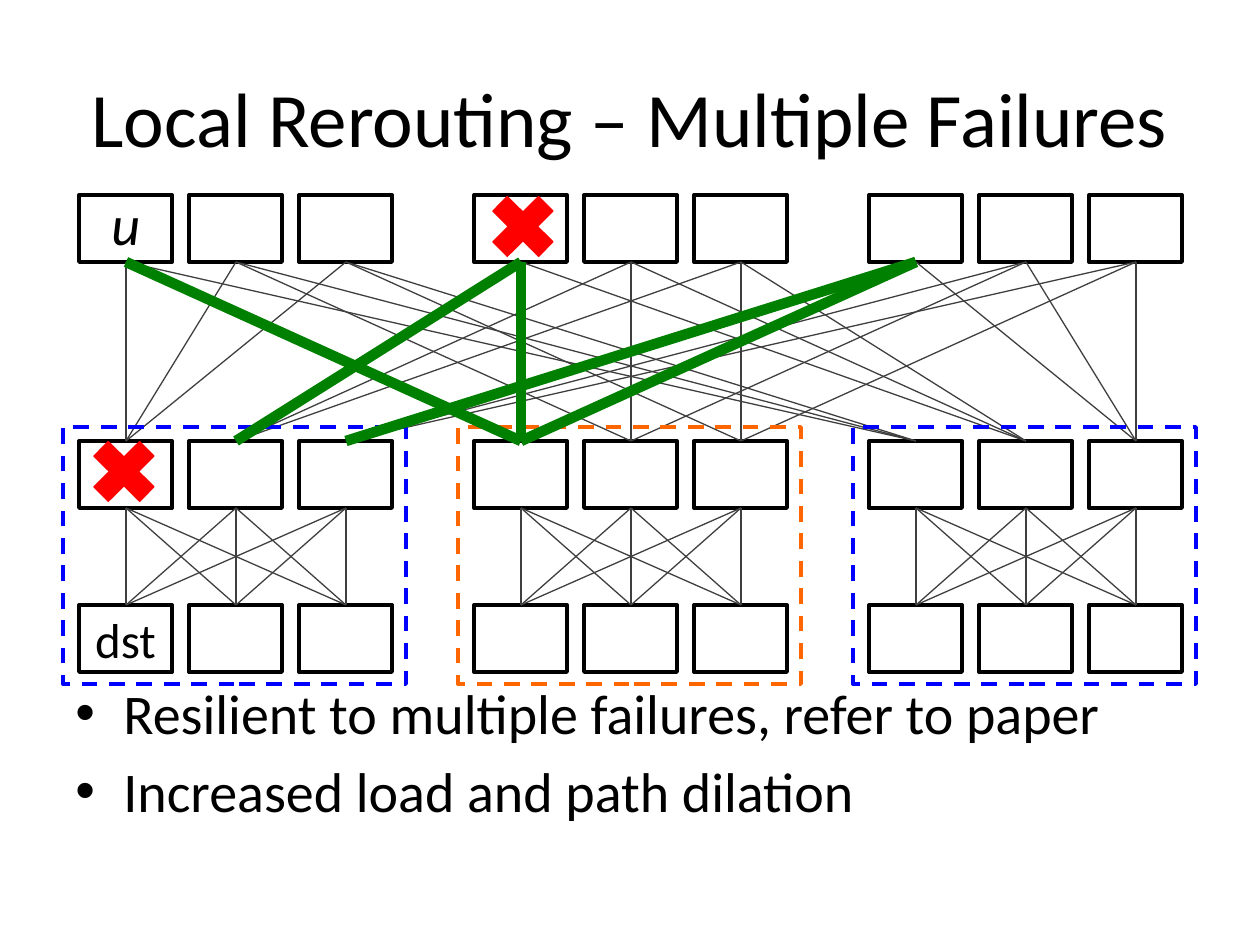
"""Build the slide on local rerouting around multiple failures in a three-pod network."""
from itertools import product

from lxml.etree import SubElement
from pptx import Presentation
from pptx.dml.color import RGBColor
from pptx.enum.dml import MSO_LINE_DASH_STYLE as Dash
from pptx.enum.shapes import MSO_CONNECTOR_TYPE as Connector, MSO_SHAPE as Shape
from pptx.enum.text import MSO_ANCHOR as Anchor, PP_ALIGN as Align
from pptx.oxml.ns import qn
from pptx.util import Emu, Pt

SCALE = 914400 / 126
rgb = RGBColor.from_string


def px(*lengths):
    return [Emu(round(length * SCALE)) for length in lengths]


def draw(kind, box, fill, line, weight):
    """Add a shape, or a straight link when kind is a connector type."""
    if isinstance(kind, Connector):
        part = slide.shapes.add_connector(kind, *px(*box))
        SubElement(part._element.spPr, qn("a:effectLst"))
    else:
        part = slide.shapes.add_shape(kind, *px(*box))
        part.shadow.inherit = False
        if fill:
            part.fill.solid()
            part.fill.fore_color.rgb = rgb(fill)
        else:
            part.fill.background()
    part.line.color.rgb = rgb(line)
    part.line.width = Pt(weight)
    return part


prs = Presentation()
prs.slide_width, prs.slide_height = px(1260, 945)
slide = prs.slides.add_slide(prs.slide_layouts[5])

title = slide.shapes.title
title.left, title.top, title.width, title.height = px(63, 38, 1134, 157)
title.text_frame.text = "Local Rerouting – Multiple Failures"
title.text_frame.vertical_anchor = Anchor.MIDDLE
heading = title.text_frame.paragraphs[0]
heading.alignment = Align.CENTER
heading.font.name, heading.font.size = "Calibri", Pt(44)
heading.font.color.rgb = rgb("000000")

takeaways = slide.shapes.add_textbox(*px(63, 672, 1134, 173)).text_frame
takeaways.word_wrap = True
takeaways.text = "Resilient to multiple failures, refer to paper\nIncreased load and path dilation"
indent = px(48)[0]
for point in takeaways.paragraphs:
    properties = point._p.get_or_add_pPr()
    properties.set("marL", str(indent))
    properties.set("indent", str(-indent))
    SubElement(properties, qn("a:buFont"), typeface="Arial")
    SubElement(properties, qn("a:buChar"), char="•")
    point.font.name, point.font.size = "Calibri", Pt(32)
    point.font.color.rgb = rgb("000000")
takeaways.paragraphs[1].space_before = Pt(6.4)

LEFT, POD_STEP, SLOT_STEP = 79, 395, 110
SWITCH_WIDTH, SWITCH_HEIGHT = 93, 67
CORE_TOP, AGG_TOP, EDGE_TOP = 195, 441, 605
CORE_BOTTOM, AGG_BOTTOM = CORE_TOP + SWITCH_HEIGHT, AGG_TOP + SWITCH_HEIGHT
lefts = [[LEFT + pod * POD_STEP + slot * SLOT_STEP for slot in range(3)] for pod in range(3)]
centers = [[left + 47 for left in pod] for pod in lefts]

switches = {}
for top, pod, slot in product((CORE_TOP, AGG_TOP, EDGE_TOP), range(3), range(3)):
    box = (lefts[pod][slot], top, SWITCH_WIDTH, SWITCH_HEIGHT)
    switches[top, pod, slot] = draw(Shape.RECTANGLE, box, "FFFFFF", "000000", 2.25)

destination = switches[EDGE_TOP, 0, 0].text_frame
destination.text = "dst"
destination.vertical_anchor = Anchor.MIDDLE
label = destination.paragraphs[0]
label.alignment = Align.CENTER
label.font.name, label.font.size = "Calibri", Pt(28)
label.font.color.rgb = rgb("000000")

for pod, upper, lower in product(range(3), repeat=3):
    link = (centers[pod][upper], AGG_BOTTOM, centers[pod][lower], EDGE_TOP)
    draw(Connector.STRAIGHT, link, None, "3F3F3F", 0.75)

for pod, group, slot in product(range(3), repeat=3):
    agg = slot if pod == 1 else group
    link = (centers[group][slot], CORE_BOTTOM, centers[pod][agg], AGG_TOP)
    draw(Connector.STRAIGHT, link, None, "3F3F3F", 0.75)

for pod, color in enumerate(("0000FF", "FF6600", "0000FF")):
    frame = draw(Shape.RECTANGLE, (63 + pod * POD_STEP, 427, 343, 257), None, color, 2.25)
    frame.line.dash_style = Dash.DASH

source = slide.shapes.add_textbox(*px(99, 183, 68, 81)).text_frame
source.word_wrap = True
source.text = "u"
label = source.paragraphs[0]
label.font.name, label.font.size, label.font.italic = "Calibri", Pt(32), True
label.font.color.rgb = rgb("000000")

detour = [(0, 1, 0), (1, 1, 0), (1, 0, 1), (2, 1, 0), (2, 0, 2)]
for group, pod, agg in detour:
    link = (centers[group][0], CORE_BOTTOM, centers[pod][agg], AGG_TOP)
    draw(Connector.STRAIGHT, link, None, "008000", 6)

for left, top in ((479, 183), (80, 428)):
    failure = draw(Shape.MATH_MULTIPLY, (left, top, 88, 87), "FF0000", "FF0000", 0.75)
    failure.adjustments[0] = 0.235

prs.save("out.pptx")
